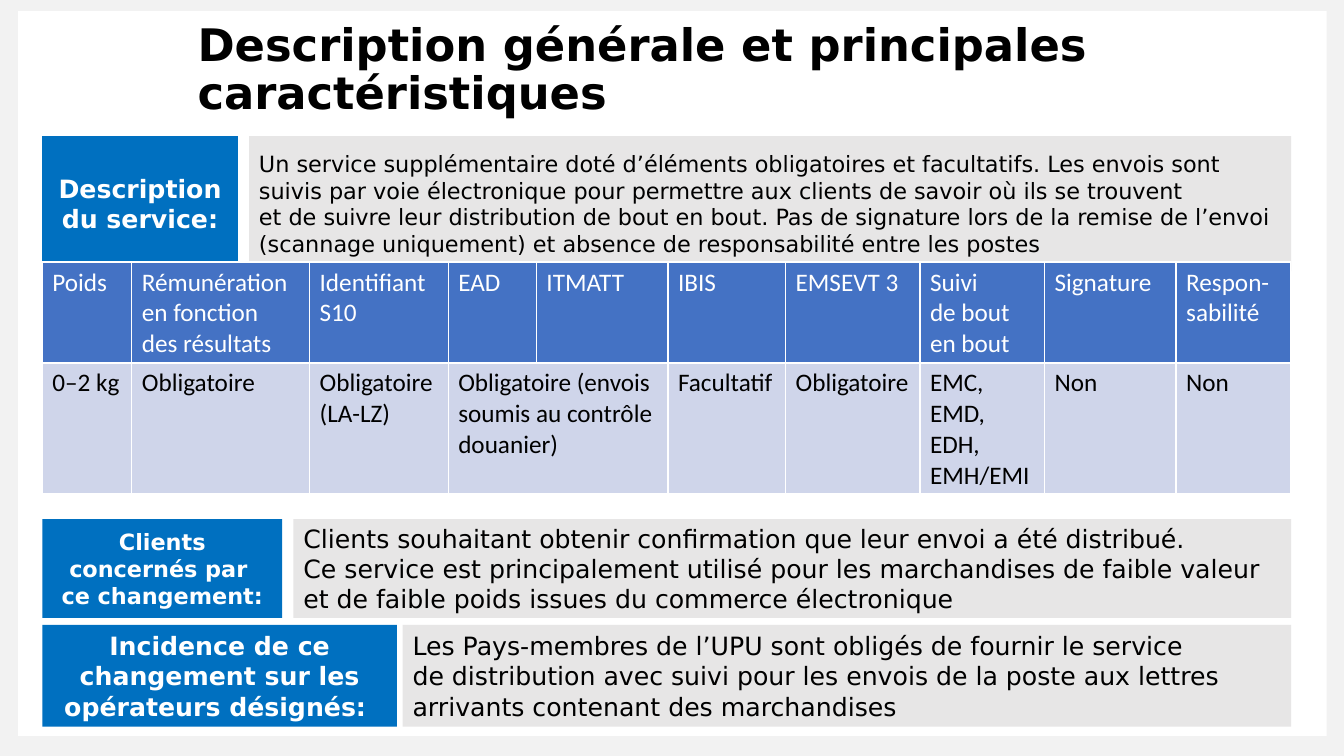
import pptx
import pptx.dml.color
import pptx.enum.shapes
import pptx.enum.text
import pptx.oxml
import pptx.oxml.ns
import pptx.util

Pt = pptx.util.Pt
ALIGN = pptx.enum.text.PP_ALIGN
ANCHOR = pptx.enum.text.MSO_ANCHOR

LEFT, WIDTH = 30.2, 892
BLACK, WHITE, BLUE, GREY = "000000", "FFFFFF", "0070C0", "E7E6E6"

# top, height, label width, gap, label size, body size, label, body
SECTIONS = [
    (97.2, 96.5, 139.7, 8, 18, 16, "Description du service:",
     "Un service supplémentaire doté d’éléments obligatoires et facultatifs. "
     "Les envois sont suivis par voie électronique pour permettre aux clients "
     "de savoir où ils se trouvent \net de suivre leur distribution de bout "
     "en bout. Pas de signature lors de la remise de l’envoi (scannage "
     "uniquement) et absence de responsabilité entre les postes"),
    (370.8, 70.6, 171.4, 8, 16, 18, "Clients concernés par \nce changement:",
     "Clients souhaitant obtenir confirmation que leur envoi a été distribué. \n"
     "Ce service est principalement utilisé pour les marchandises de faible "
     "valeur \net de faible poids issues du commerce électronique"),
    (446.4, 72.7, 253.4, 4, 18, 18,
     "Incidence de ce changement sur les opérateurs désignés: ",
     "Les Pays-membres de l’UPU sont obligés de fournir le service \n"
     "de distribution avec suivi pour les envois de la poste aux lettres "
     "arrivants contenant des marchandises"),
]

# column width, heading, value; None continues the value on its left
FEATURES = [
    (64, "Poids", "0–2 kg"),
    (127, "Rémunération en fonction des résultats", "Obligatoire"),
    (99, "Identifiant S10", "Obligatoire\n(LA-LZ)"),
    (63, "EAD", "Obligatoire (envois soumis au contrôle douanier)"),
    (94, "ITMATT", None),
    (84, "IBIS", "Facultatif"),
    (96, "EMSEVT 3", "Obligatoire"),
    (89, "Suivi \nde bout en bout", "EMC, EMD, EDH, EMH/EMI"),
    (94, "Signature", "Non"),
    (82, "Respon-sabilité", "Non"),
]


def color(value):
    return pptx.dml.color.RGBColor.from_string(value)


def write(para, text, ink, **formats):
    para.text = text
    para.font.color.rgb = color(ink)
    for name, value in formats.items():
        setattr(para.font, name, value)


def add_panel(page, box, fill):
    panel = page.shapes.add_shape(
        pptx.enum.shapes.MSO_SHAPE.RECTANGLE, *map(Pt, box))
    panel.shadow.inherit = False
    panel.fill.solid()
    panel.fill.fore_color.rgb = color(fill)
    panel.line.fill.background()
    return panel


def fill_frame(shape, text, ink, align, **formats):
    frame = shape.text_frame
    frame.word_wrap = True
    frame.vertical_anchor = ANCHOR.MIDDLE
    para = frame.paragraphs[0]
    write(para, text, ink, name="DejaVu Sans", **formats)
    para.alignment = align
    return para


def add_backdrop(page, width, height):
    add_panel(page, (0, 0, width, height), "F2F2F2")
    add_panel(page, (13, 8, width - 25.4, height - 22.3), WHITE)


def add_title(page, box):
    title = page.shapes.add_textbox(*map(Pt, box))
    para = fill_frame(title, "Description générale et principales caractéristiques",
                      BLACK, ALIGN.LEFT, size=Pt(32), bold=True)
    para.line_spacing = 0.9


def add_section(page, box, label_width, gap, label_size, body_size, label, body):
    """Place a blue label and, after a gap, its grey text in the box."""
    left, top, width, height = box
    offset = label_width + gap
    body_panel = add_panel(page, (left + offset, top, width - offset, height), GREY)
    fill_frame(body_panel, body, BLACK, ALIGN.LEFT, size=Pt(body_size))
    label_panel = add_panel(page, (left, top, label_width, height), BLUE)
    fill_frame(label_panel, label, WHITE, ALIGN.CENTER, size=Pt(label_size), bold=True)


def add_borders(cell):
    properties = cell._tc.get_or_add_tcPr()
    for position, side in enumerate(("lnL", "lnR", "lnT", "lnB")):
        properties.insert(position, pptx.oxml.parse_xml(
            f'<a:{side} {pptx.oxml.ns.nsdecls("a")} w="12700"><a:solidFill>'
            f'<a:srgbClr val="{WHITE}"/></a:solidFill></a:{side}>'))


def fill_cell(cell, text, ink, fill, break_paragraphs):
    cell.fill.solid()
    cell.fill.fore_color.rgb = color(fill)
    add_borders(cell)
    parts = text.split("\n") if break_paragraphs else [text]
    for index, part in enumerate(parts):
        frame = cell.text_frame
        para = frame.add_paragraph() if index else frame.paragraphs[0]
        write(para, part, ink, name="Calibri", size=Pt(18), bold=False)


def add_features(page, box):
    table = page.shapes.add_table(2, len(FEATURES), *map(Pt, box)).table
    for row in table.rows:
        row.height = Pt(box[3] / 2)
    for index, (width, heading, value) in enumerate(FEATURES):
        table.columns[index].width = Pt(width)
        fill_cell(table.cell(0, index), heading, WHITE, "4472C4", False)
        fill_cell(table.cell(1, index), value or "", BLACK, "CFD5EA", True)
        if value is None:
            table.cell(1, index - 1).merge(table.cell(1, index))


def main():
    deck = pptx.Presentation()
    deck.slide_width, deck.slide_height = Pt(960), Pt(540)
    page = deck.slides.add_slide(deck.slide_layouts[6])
    add_backdrop(page, 960, 540)
    add_title(page, (134, 28, 788, 45.4))
    for top, height, *content in SECTIONS:
        add_section(page, (LEFT, top, WIDTH, height), *content)
    add_features(page, (LEFT, 187.2, WIDTH, 118))
    deck.save("out.pptx")


if __name__ == "__main__":
    main()
